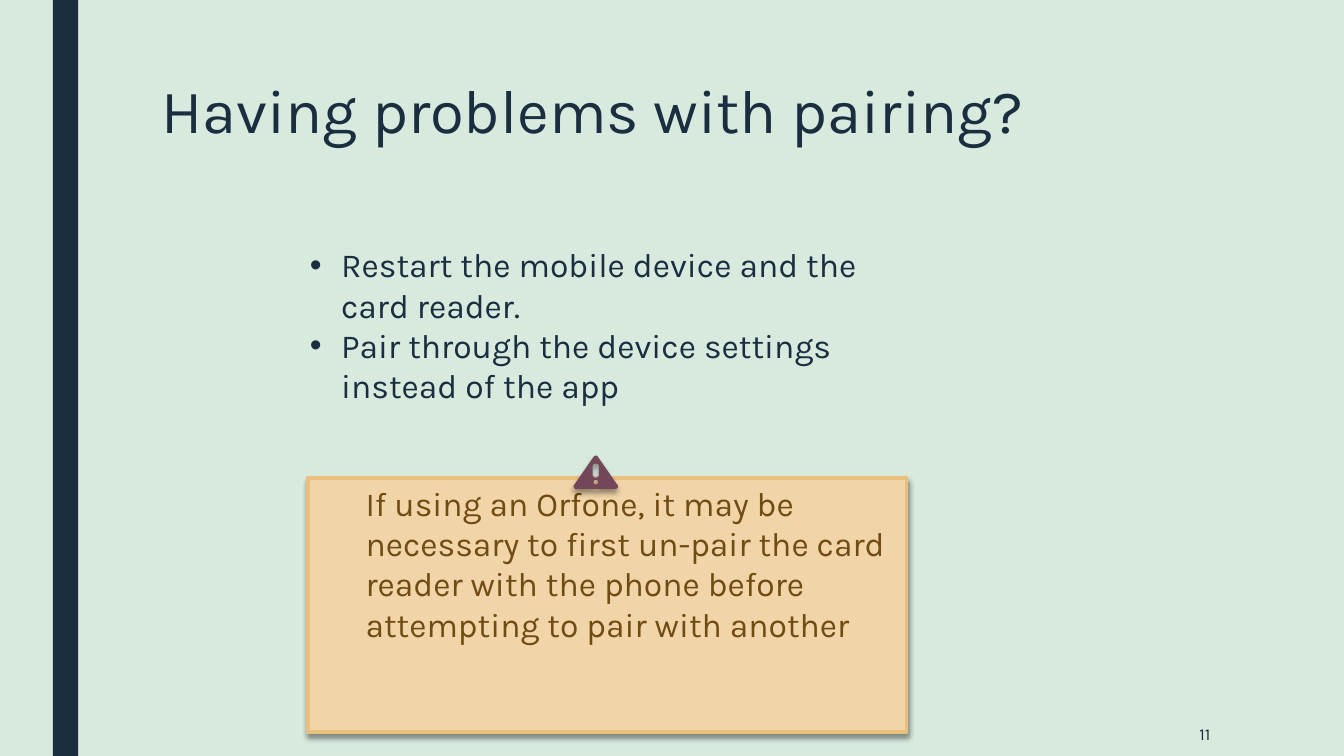
import math

from lxml import etree
from pptx import Presentation
from pptx.dml.color import RGBColor
from pptx.enum.shapes import MSO_SHAPE
from pptx.enum.text import MSO_ANCHOR, MSO_AUTO_SIZE, PP_ALIGN
from pptx.oxml.ns import qn
from pptx.util import Cm, Pt

RECTANGLE = MSO_SHAPE.RECTANGLE
TOP, MIDDLE = MSO_ANCHOR.TOP, MSO_ANCHOR.MIDDLE
LEFT, RIGHT = PP_ALIGN.LEFT, PP_ALIGN.RIGHT
NO_AUTOFIT = MSO_AUTO_SIZE.NONE

MINT = RGBColor(0xD8, 0xE9, 0xDE)
NAVY = RGBColor(0x1A, 0x2E, 0x40)
SAND = RGBColor(0xF1, 0xD5, 0xA9)
AMBER = RGBColor(0xEA, 0xBF, 0x7E)
BROWN = RGBColor(0x70, 0x4B, 0x12)
PLUM = RGBColor(0x73, 0x46, 0x5A)
SHADOW = RGBColor(0x00, 0x00, 0x00)

FONT = "Karla"
SLIDE_WIDTH, SLIDE_HEIGHT = 33.86, 19.05
UNITS_PER_CM = 1000  # the freeform grid takes whole numbers only

TITLE = "Having problems with pairing?"
TIPS = [
    "Restart the mobile device and the card reader.",
    "Pair through the device settings instead of the app",
]
WARNING = (
    "If using an Orfone, it may be necessary to first un-pair the card reader "
    "with the phone before attempting to pair with another"
)


def place(part, box):
    part.left, part.top, part.width, part.height = map(Cm, box)


def write(part, lines, size, color, anchor=TOP, bullet=None, margin=0, indent=0, **paragraph_format):
    """Fill a text part; paragraph_format holds paragraph attributes."""
    frame = part.text_frame
    frame_format = {"word_wrap": True, "auto_size": NO_AUTOFIT, "vertical_anchor": anchor}
    for key, value in frame_format.items():
        setattr(frame, key, value)
    frame.text = "\n".join(lines)
    paragraph_format = {"alignment": LEFT, "space_before": Pt(0), **paragraph_format}
    for paragraph in frame.paragraphs:
        for key, value in paragraph_format.items():
            setattr(paragraph, key, value)
        font_format = {"name": FONT, "size": Pt(size)}
        for key, value in font_format.items():
            setattr(paragraph.font, key, value)
            setattr(paragraph.runs[0].font, key, value)
        paragraph.runs[0].font.color.rgb = color
        properties = paragraph._p.get_or_add_pPr()
        properties.set("marL", str(Cm(margin)))
        properties.set("indent", str(Cm(indent)))
        if bullet:
            mark = etree.Element(qn("a:buChar"), char=bullet)
            properties.insert_element_before(mark, "a:tabLst", "a:defRPr", "a:extLst")


def paint(part, fill, line=None, line_width=0):
    part.shadow.inherit = False
    part.fill.solid()
    part.fill.fore_color.rgb = fill
    if line is None:
        part.line.fill.background()
    else:
        part.line.color.rgb = line
        part.line.width = Pt(line_width)


def cast_shadow(part):
    effects = part._element.spPr.find(qn("a:effectLst"))
    shadow = etree.SubElement(
        effects, qn("a:outerShdw"), blurRad=str(Pt(4)), dist=str(Pt(3)),
        dir="5400000", algn="ctr", rotWithShape="0")
    color = etree.SubElement(shadow, qn("a:srgbClr"), val=str(SHADOW))
    etree.SubElement(color, qn("a:alpha"), val="40000")


def add_side_bar(slide, box):
    bar = slide.shapes.add_shape(RECTANGLE, *map(Cm, box))
    paint(bar, NAVY)


def add_title(slide, box):
    title = slide.shapes.title
    place(title, box)
    write(title, [TITLE], 44, NAVY, line_spacing=0.89)


def add_tips(slide, box):
    tips = slide.placeholders[1]
    place(tips, box)
    write(tips, TIPS, 24, NAVY, bullet="•", margin=2.06, indent=-0.79)


def arc_points(arcs):
    """Grid points along arcs given as centre x, centre y, radius (cm), start and end degrees."""
    points = []
    for x, y, radius, start, end in arcs:
        for step in range(13):
            angle = math.radians(start + (end - start) * step / 12)
            points.append((round((x + radius * math.cos(angle)) * UNITS_PER_CM),
                           round((y + radius * math.sin(angle)) * UNITS_PER_CM)))
    return points


def add_warning_sign(slide, left, top):
    triangle = [(0.06, 0.78, 0.06, 90, 215), (0.56, 0.06, 0.06, 215, 325), (1.06, 0.78, 0.06, 325, 450)]
    stroke = [(0.56, 0.28, 0.08, 180, 360), (0.56, 0.48, 0.08, 0, 180)]
    dot = [(0.56, 0.67, 0.06, 360, 0)]
    outlines = [arc_points(arcs) for arcs in (triangle, stroke, dot)]
    builder = slide.shapes.build_freeform(*outlines[0][0], scale=Cm(1) / UNITS_PER_CM)
    for number, outline in enumerate(outlines):
        if number:
            builder.move_to(*outline[0])
        builder.add_line_segments(outline[1:], close=True)
    sign = builder.convert_to_shape(Cm(left), Cm(top))
    paint(sign, PLUM)
    cast_shadow(sign)


def add_warning(slide, box):
    left, top, width, height = box
    # Panel
    panel = slide.shapes.add_shape(RECTANGLE, *map(Cm, box))
    paint(panel, SAND, AMBER, 2.75)
    cast_shadow(panel)
    # Message
    message = slide.shapes.add_textbox(*map(Cm, (left - 0.06, top, width + 0.07, 4.37)))
    write(message, [WARNING], 24, BROWN, margin=1.27)
    # Sign on the upper edge
    add_warning_sign(slide, left + 6.7, top - 0.56)


def add_page_number(slide, box):
    page_number = slide.shapes.add_textbox(*map(Cm, box))
    write(page_number, ["11"], 12, NAVY, anchor=MIDDLE, alignment=RIGHT)


def build_pairing_slide(presentation):
    slide = presentation.slides.add_slide(presentation.slide_layouts[1])
    slide.background.fill.solid()
    slide.background.fill.fore_color.rgb = MINT
    add_side_bar(slide, (1.33, 0, 0.64, SLIDE_HEIGHT))
    add_title(slide, (3.81, 1.9, 26.67, 4.11))
    add_tips(slide, (6.28, 6.03, 17.45, 6.4))
    add_warning(slide, (7.75, 12.04, 15.09, 6.4))
    add_page_number(slide, (26.3, 17.93, 4.45, 1.12))


def main():
    presentation = Presentation()
    presentation.slide_width = Cm(SLIDE_WIDTH)
    presentation.slide_height = Cm(SLIDE_HEIGHT)
    build_pairing_slide(presentation)
    presentation.save("out.pptx")


if __name__ == "__main__":
    main()
